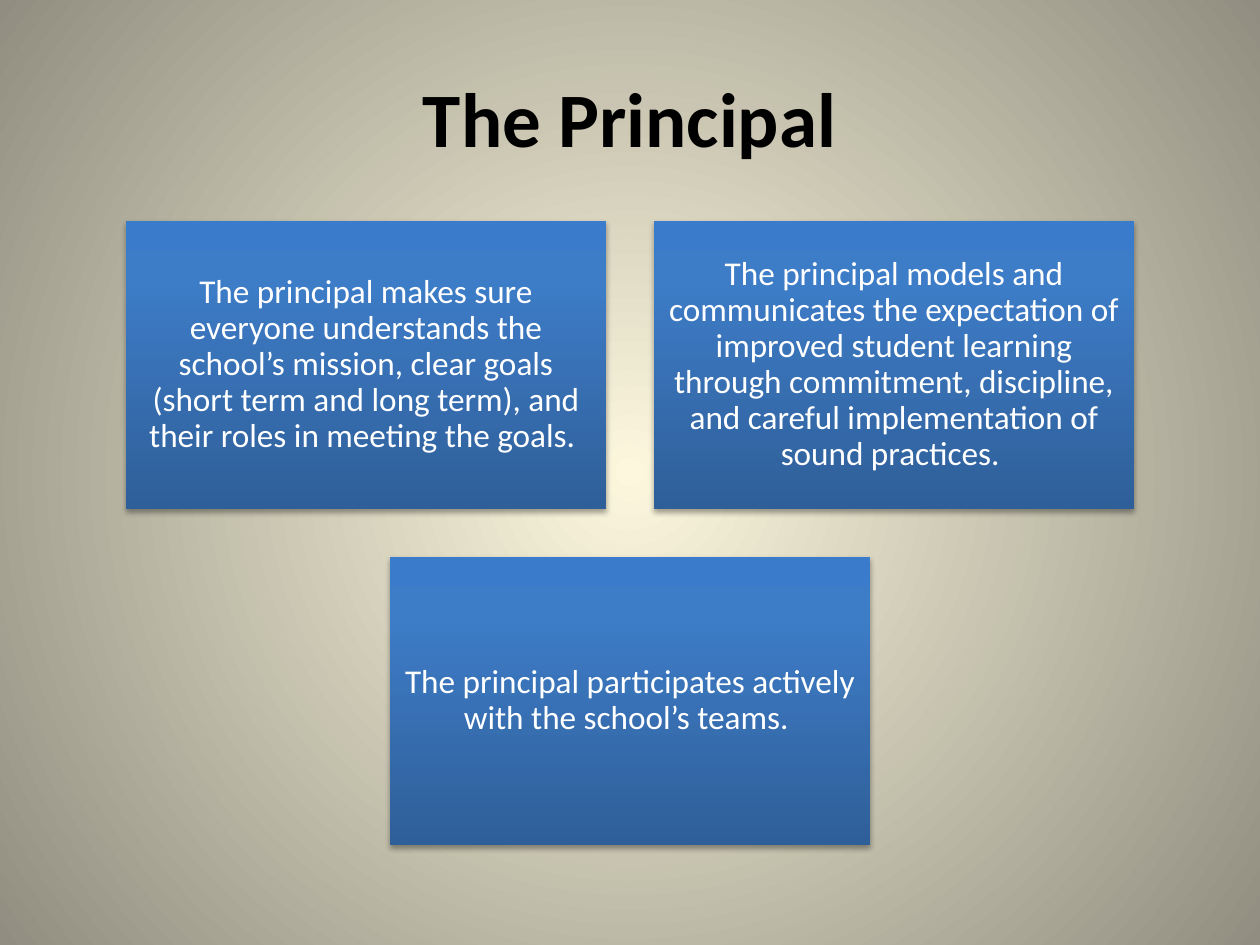
from dataclasses import dataclass

from lxml.etree import SubElement
from pptx import Presentation
from pptx.enum.shapes import MSO_SHAPE
from pptx.enum.text import MSO_ANCHOR, PP_ALIGN
from pptx.dml.color import RGBColor
from pptx.oxml.ns import qn
from pptx.util import Emu, Pt

PX = 914400 / 126
FONT = "Calibri"
COLORS = {
    "center": "FCF7DD",
    "edge": "918E81",
    "card_bottom": "2F5F99",
    "card_middle": "3D7CC7",
    "card_top": "3A7CCB",
    "title": "000000",
    "card_text": "FFFFFF",
    "shadow": "000000",
}
CARD_W, CARD_H, GAP = 480, 288, 48
LEFT, TOP = 126, 221


@dataclass
class Card:
    column: float
    row: int
    text: str


CARDS = [
    Card(0, 0, "The principal makes sure everyone understands the school’s mission, "
               "clear goals (short term and long term), and their roles in meeting the goals. "),
    Card(1, 0, "The principal models and communicates the expectation of improved student "
               "learning through commitment, discipline, and careful implementation of "
               "sound practices. "),
    Card(0.5, 1, "The principal participates actively with the school’s teams. "),
]


def px(n: float) -> Emu:
    return Emu(round(n * PX))


def set_stops(grad, stops: list[tuple[int, str]]) -> None:
    gs_list = grad.find(qn("a:gsLst"))
    for gs in list(gs_list):
        gs_list.remove(gs)
    for position, color in stops:
        gs = SubElement(gs_list, qn("a:gs"), pos=str(position * 1000))
        SubElement(gs, qn("a:srgbClr"), val=COLORS[color])


def set_background(slide) -> None:
    slide.background.fill.gradient()
    grad = slide.element.find(".//" + qn("a:gradFill"))
    set_stops(grad, [(0, "center"), (100, "edge")])
    grad.remove(grad.find(qn("a:lin")))
    path = SubElement(grad, qn("a:path"), path="circle")
    SubElement(path, qn("a:fillToRect"), l="50000", t="50000", r="50000", b="50000")


def add_shadow(s) -> None:
    s.shadow.inherit = False
    effects = s._element.spPr.find(qn("a:effectLst"))
    shadow = SubElement(effects, qn("a:outerShdw"), blurRad=str(Pt(3.1)),
                        dist=str(Pt(1.8)), dir="5400000", rotWithShape="0")
    color = SubElement(shadow, qn("a:srgbClr"), val=COLORS["shadow"])
    SubElement(color, qn("a:alpha"), val="35000")


def set_text(s, text: str, size: int, color: str, bold: bool = False) -> None:
    tf = s.text_frame
    tf.text = text
    tf.word_wrap = True
    tf.vertical_anchor = MSO_ANCHOR.MIDDLE
    p = tf.paragraphs[0]
    p.alignment = PP_ALIGN.CENTER
    r = p.runs[0]
    r.font.name = FONT
    r.font.size = Pt(size)
    r.font.bold = bold
    r.font.color.rgb = RGBColor.from_string(COLORS[color])


def add_card(slide, card: Card) -> None:
    left = LEFT + card.column * (CARD_W + GAP)
    top = TOP + card.row * (CARD_H + GAP)
    s = slide.shapes.add_shape(MSO_SHAPE.RECTANGLE, px(left), px(top), px(CARD_W), px(CARD_H))
    s.fill.gradient()
    s.fill.gradient_angle = 90
    set_stops(s._element.spPr.find(qn("a:gradFill")),
              [(0, "card_bottom"), (80, "card_middle"), (100, "card_top")])
    s.line.fill.background()
    add_shadow(s)
    set_text(s, card.text, 19, "card_text")
    tf = s.text_frame
    tf.margin_left = tf.margin_right = tf.margin_top = tf.margin_bottom = px(10)
    tf.paragraphs[0].line_spacing = 0.9


def main() -> None:
    prs = Presentation()
    prs.slide_width, prs.slide_height = px(1260), px(945)
    slide = prs.slides.add_slide(prs.slide_layouts[6])
    set_background(slide)
    title = slide.shapes.add_textbox(px(63), px(38), px(1134), px(158))
    set_text(title, "The Principal", 44, "title", bold=True)
    for card in CARDS:
        add_card(slide, card)
    prs.save("out.pptx")


if __name__ == "__main__":
    main()
